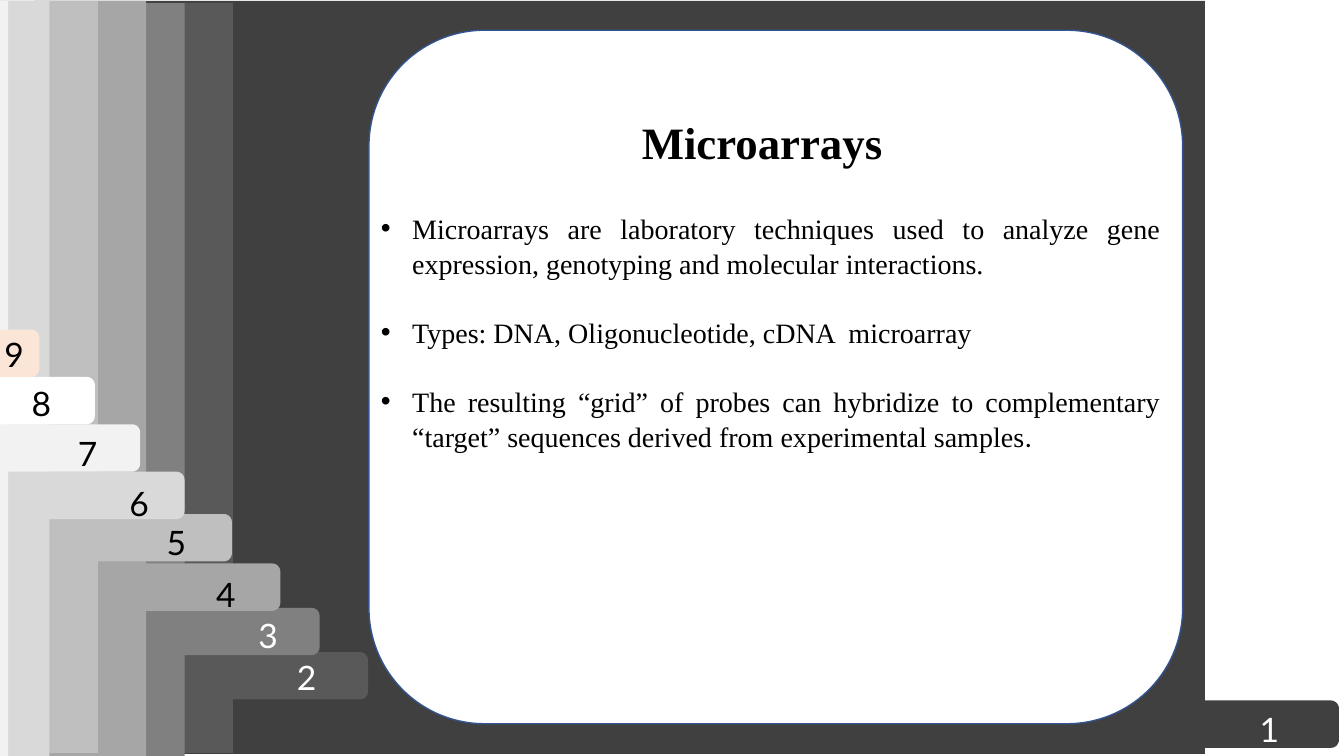
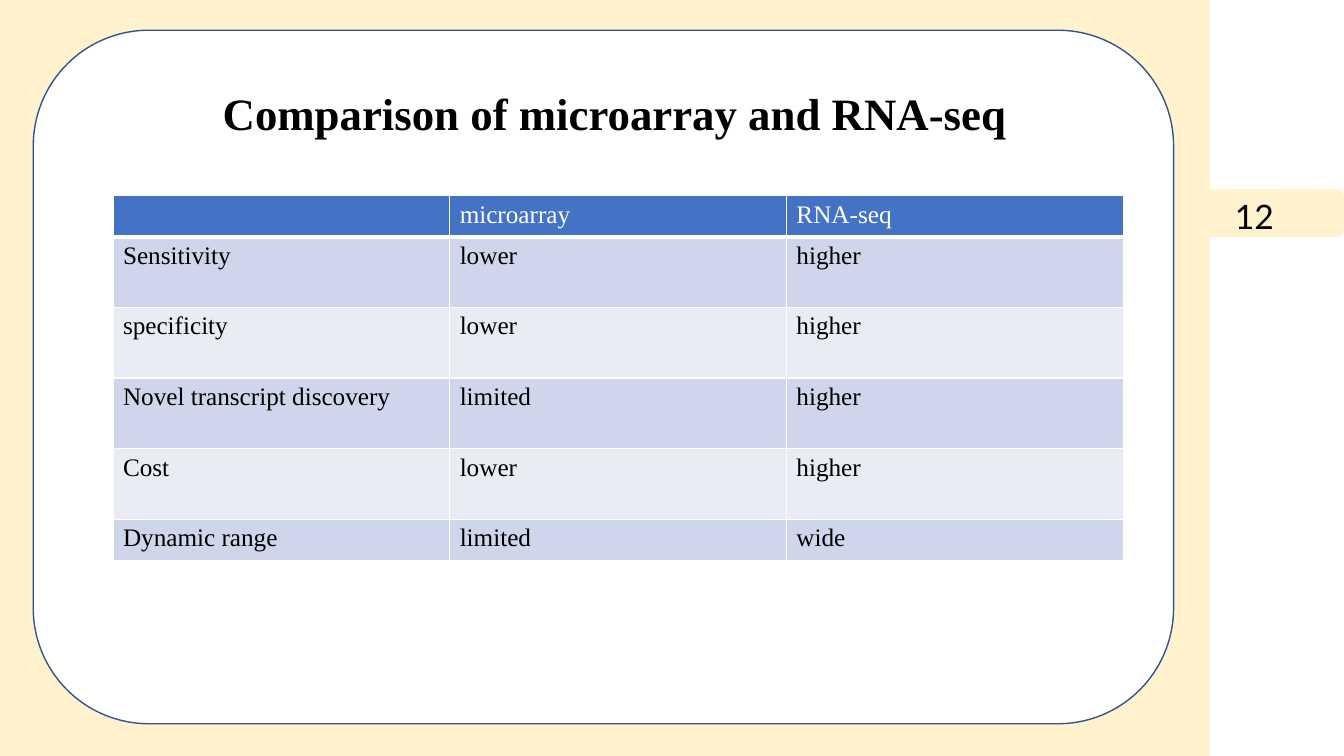
"""Build two slides on microarrays with staggered numbered tabs."""
from dataclasses import dataclass
from math import cos, pi, sin

from lxml import etree
from pptx import Presentation
from pptx.dml.color import RGBColor
from pptx.enum.shapes import MSO_SHAPE
from pptx.enum.text import PP_ALIGN
from pptx.oxml.ns import qn
from pptx.slide import Slide
from pptx.table import _Cell
from pptx.text.text import _Paragraph
from pptx.util import Emu, Pt

ROUNDED = MSO_SHAPE.ROUNDED_RECTANGLE
LEFT, CENTER, JUSTIFY = PP_ALIGN.LEFT, PP_ALIGN.CENTER, PP_ALIGN.JUSTIFY

EMU_PER_PX = 9144
EMU_PER_POINT = 12700
SERIF, NUMERAL, BODY_SANS = "Times New Roman", "Lato", "Calibri"
BLACK, WHITE, OUTLINE = "000000", "FFFFFF", "325491"
HEADER_FILL, ROW_FILLS = "4472C4", ("CFD5EA", "E9EBF5")
TAB_HEIGHT, TAB_RADIUS, CORNER_STEPS = 47, 8, 6
NUMBER_WIDTH, NUMBER_HEIGHT = 80, 50
PANEL_TOP, PANEL_HEIGHT = 30, 688
TITLE_HEIGHT = 64
BULLET_INDENT = 31


@dataclass(frozen=True)
class Band:
    """A full-height band with a numbered tab on its right side."""
    number: str
    fill: str
    ink: str
    left: int
    top: int
    body_right: int
    bottom: int
    tab_right: int
    tab_top: int
    number_left: int
    number_top: int


@dataclass(frozen=True)
class Box:
    """A rectangle in px."""
    left: int
    top: int
    width: int
    height: int

    def emu(self) -> tuple[Emu, Emu, Emu, Emu]:
        """Return the rectangle in EMU."""
        return px(self.left), px(self.top), px(self.width), px(self.height)


OPENING_BANDS = (
    Band("1", "404040", WHITE, 34, 1, 1195, 748, 1328, 695, 1219, 698),
    Band("2", "595959", WHITE, -929, 3, 231, 747, 365, 647, 264, 647),
    Band("3", "808080", WHITE, -977, 3, 183, 751, 317, 603, 226, 605),
    Band("4", "A6A6A6", BLACK, -1016, 1, 145, 753, 278, 559, 184, 564),
    Band("5", "BFBFBF", BLACK, -1064, 1, 97, 747, 230, 510, 135, 513),
    Band("6", "D9D9D9", BLACK, -1111, 1, 49, 751, 183, 468, 98, 474),
    Band("7", "F2F2F2", BLACK, -1150, 1, 8, 751, 139, 421, 47, 425),
    Band("8", "FFFFFF", BLACK, -1198, 1, -37, 751, 94, 374, 1, 375),
    Band("9", "FBE5D6", BLACK, -1246, 1, -91, 750, 39, 327, -26, 326),
)
COMPARISON_BAND = Band("12", "FFF2CC", BLACK, 0, 0, 1200, 754, 1333, 188, 1204, 189)

BULLETS = (
    (("Microarrays are laboratory techniques used to analyze gene expression, "
      "genotyping and molecular interactions.", SERIF),),
    (("Types: DNA, Oligonucleotide, cDNA  microarray", SERIF),),
    (("The resulting “grid” of probes can hybridize to complementary “target” "
      "sequences derived from experimental samples", SERIF), (".", BODY_SANS)),
)
COMPARISON = (
    ("", "microarray", "RNA-seq"),
    ("Sensitivity", "lower", "higher"),
    ("specificity", "lower", "higher"),
    ("Novel transcript discovery", "limited", "higher"),
    ("Cost", "lower", "higher"),
    ("Dynamic range", "limited", "wide"),
)
ROW_HEIGHTS = (41, 70, 70, 70, 70, 41)


def px(length: float) -> Emu:
    """Convert px to EMU."""
    return Emu(round(length * EMU_PER_PX))


def color(value: str) -> RGBColor:
    """Turn a hex string into a colour."""
    return RGBColor.from_string(value)


def add_run(paragraph: _Paragraph, text: str, size: int, font: str = SERIF,
            ink: str = BLACK, bold: bool = False) -> None:
    """Append a styled run to a paragraph."""
    run = paragraph.add_run()
    run.text = text
    run.font.size = Pt(size)
    run.font.name = font
    run.font.bold = bold
    run.font.color.rgb = color(ink)


def add_label(slide: Slide, box: Box, text: str, size: int, font: str = SERIF,
              ink: str = BLACK, bold: bool = False, align: PP_ALIGN = CENTER) -> None:
    """Add a text box with one line of text."""
    frame = slide.shapes.add_textbox(*box.emu()).text_frame
    frame.word_wrap = True
    frame.paragraphs[0].alignment = align
    add_run(frame.paragraphs[0], text, size, font, ink, bold)


def add_title(slide: Slide, left: int, top: int, width: int, text: str,
              align: PP_ALIGN = CENTER) -> None:
    """Add the slide title."""
    add_label(slide, Box(left, top, width, TITLE_HEIGHT), text, 32, bold=True, align=align)


def corner(center_x: float, center_y: float, start: float) -> list[tuple[float, float]]:
    """Return points of a clockwise quarter turn."""
    angles = [start + pi / 2 * step / CORNER_STEPS for step in range(CORNER_STEPS + 1)]
    return [(center_x + TAB_RADIUS * cos(angle), center_y + TAB_RADIUS * sin(angle))
            for angle in angles]


def add_band(slide: Slide, band: Band) -> None:
    """Draw a band together with its rounded tab."""
    tab_bottom = band.tab_top + TAB_HEIGHT
    corner_x = band.tab_right - TAB_RADIUS
    outline = [
        (band.body_right, band.top),
        (band.body_right, band.tab_top),
        *corner(corner_x, band.tab_top + TAB_RADIUS, -pi / 2),
        *corner(corner_x, tab_bottom - TAB_RADIUS, 0),
        (band.body_right, tab_bottom),
        (band.body_right, band.bottom),
        (band.left, band.bottom),
    ]
    builder = slide.shapes.build_freeform(px(band.left), px(band.top))
    builder.add_line_segments([(px(x), px(y)) for x, y in outline], close=True)
    body = builder.convert_to_shape()
    body.shadow.inherit = False
    body.fill.solid()
    body.fill.fore_color.rgb = color(band.fill)
    body.line.fill.background()


def add_number(slide: Slide, band: Band) -> None:
    """Write the number on a band's tab."""
    box = Box(band.number_left, band.number_top, NUMBER_WIDTH, NUMBER_HEIGHT)
    add_label(slide, box, band.number, 24, NUMERAL, band.ink)


def add_panel(slide: Slide, left: int, width: int) -> None:
    """Draw the white rounded content panel."""
    box = Box(left, PANEL_TOP, width, PANEL_HEIGHT)
    panel = slide.shapes.add_shape(ROUNDED, *box.emu())
    panel.shadow.inherit = False
    panel.fill.solid()
    panel.fill.fore_color.rgb = color(WHITE)
    panel.line.color.rgb = color(OUTLINE)
    panel.line.width = Pt(1)


def add_bullets(slide: Slide, box: Box) -> None:
    """Write the justified bullet list."""
    frame = slide.shapes.add_textbox(*box.emu()).text_frame
    frame.word_wrap = True
    for index, pieces in enumerate(BULLETS):
        paragraph = frame.add_paragraph() if index else frame.paragraphs[0]
        paragraph.alignment = JUSTIFY
        paragraph.line_spacing = 1.05
        paragraph.space_after = Pt(24)
        properties = paragraph._p.get_or_add_pPr()
        properties.set("marL", str(px(BULLET_INDENT)))
        properties.set("indent", str(px(-BULLET_INDENT)))
        etree.SubElement(properties, qn("a:buFont"), typeface="Arial")
        etree.SubElement(properties, qn("a:buChar"), char="•")
        for text, font in pieces:
            add_run(paragraph, text, 20, font)


def style_cell(cell: _Cell, fill: str, bottom_width: int) -> None:
    """Give a cell white borders and a solid fill."""
    properties = cell._tc.get_or_add_tcPr()
    for side, width in (("L", 1), ("R", 1), ("T", 1), ("B", bottom_width)):
        border = etree.SubElement(properties, qn(f"a:ln{side}"), w=str(width * EMU_PER_POINT))
        paint = etree.SubElement(border, qn("a:solidFill"))
        etree.SubElement(paint, qn("a:srgbClr"), val=WHITE)
    cell.fill.solid()
    cell.fill.fore_color.rgb = color(fill)


def add_comparison(slide: Slide, left: int, top: int, column_width: int) -> None:
    """Add the comparison table."""
    columns = len(COMPARISON[0])
    box = Box(left, top, column_width * columns, sum(ROW_HEIGHTS))
    table = slide.shapes.add_table(len(COMPARISON), columns, *box.emu()).table
    table.first_row = False
    table.horz_banding = False
    for column in table.columns:
        column.width = px(column_width)
    for row, (values, height) in enumerate(zip(COMPARISON, ROW_HEIGHTS)):
        table.rows[row].height = px(height)
        fill = ROW_FILLS[(row - 1) % 2] if row else HEADER_FILL
        for column, text in enumerate(values):
            cell = table.cell(row, column)
            style_cell(cell, fill, 1 if row else 3)
            if text:
                add_run(cell.text_frame.paragraphs[0], text, 18, ink=BLACK if row else WHITE)


def build_opening(slide: Slide) -> None:
    """Build the slide that introduces microarrays."""
    for band in OPENING_BANDS:
        add_band(slide, band)
    for band in OPENING_BANDS:
        add_number(slide, band)
    add_panel(slide, 366, 807)
    add_bullets(slide, Box(368, 203, 793, 279))
    add_title(slide, 478, 109, 556, "Microarrays")


def build_comparison(slide: Slide) -> None:
    """Build the slide that compares the two methods."""
    add_band(slide, COMPARISON_BAND)
    add_number(slide, COMPARISON_BAND)
    add_panel(slide, 33, 1131)
    add_title(slide, 211, 80, 805, "Comparison of microarray and RNA-seq", LEFT)
    add_comparison(slide, 112, 194, 334)


def main() -> None:
    """Build and save the presentation."""
    deck = Presentation()
    deck.slide_width, deck.slide_height = px(1333), px(750)
    blank = deck.slide_layouts[6]
    for build in (build_opening, build_comparison):
        build(deck.slides.add_slide(blank))
    deck.save("out.pptx")


if __name__ == "__main__":
    main()
